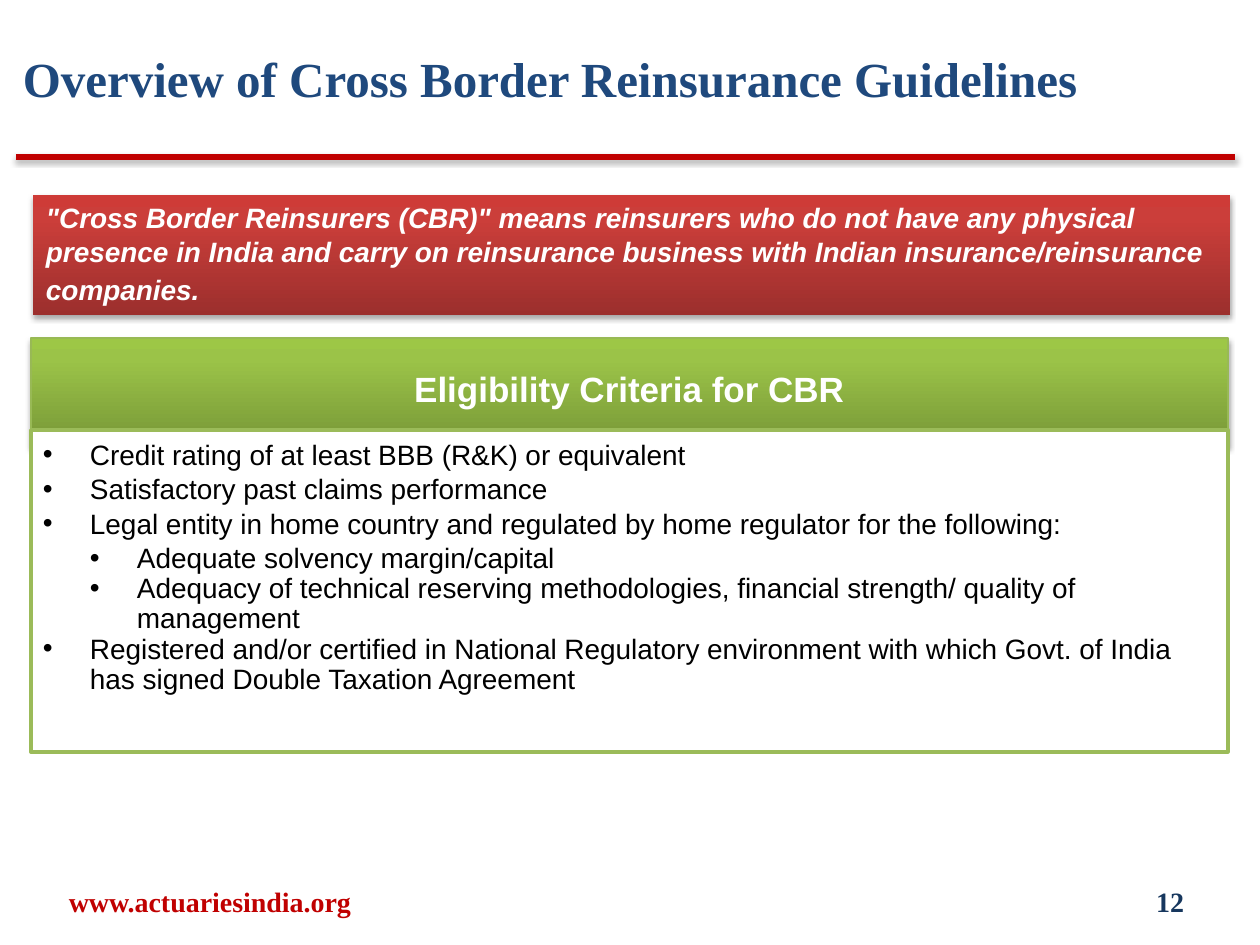
from pptx import Presentation
from pptx.dml.color import RGBColor
from pptx.enum.shapes import MSO_CONNECTOR as CONN, MSO_SHAPE as SHAPE
from pptx.enum.text import MSO_ANCHOR as ANCHOR, PP_ALIGN as ALIGN
from pptx.oxml import parse_xml
from pptx.oxml.ns import nsdecls
from pptx.util import Emu, Pt

SCALE = 914400 / 126
SERIF = "Times New Roman"
RED, WHITE, GREEN = "C00000", "FFFFFF", "9BBB59"
INDENT = 47

# Level and space after for each criterion
CRITERIA = [
    ("Credit rating of at least BBB (R&K) or equivalent", 1, 2.4),
    ("Satisfactory past claims performance", 1, 2.4),
    ("Legal entity in home country and regulated by home regulator "
     "for the following:", 1, 2.4),
    ("Adequate solvency margin/capital", 2, 0),
    ("Adequacy of technical reserving methodologies, financial strength/ "
     "quality of management", 2, 0),
    ("Registered and/or certified in National Regulatory environment with "
     "which Govt. of India has signed Double Taxation Agreement", 1, 0),
]


def px(n):
    return Emu(round(n * SCALE))


def rgb(code):
    return RGBColor.from_string(code)


def shade(props, alpha, dist):
    """Add a soft shadow that falls straight down."""
    props.append(parse_xml(
        f'<a:effectLst {nsdecls("a")}><a:outerShdw blurRad="40000" '
        f'dist="{dist}" dir="5400000" rotWithShape="0"><a:srgbClr val="000000">'
        f'<a:alpha val="{alpha}000"/></a:srgbClr></a:outerShdw></a:effectLst>'))


def blend(shape, low, mid, top):
    """Fill a shape with a gradient that rises from its lower edge."""
    stops = "".join(
        f'<a:gs pos="{at}000"><a:srgbClr val="{code}"/></a:gs>'
        for at, code in ((0, low), (80, mid), (100, top)))
    shape.fill.background()
    props = shape._element.spPr
    old = props.find("{*}noFill")
    props.replace(old, parse_xml(
        f'<a:gradFill {nsdecls("a")} rotWithShape="1"><a:gsLst>{stops}</a:gsLst>'
        '<a:lin ang="16200000" scaled="0"/></a:gradFill>'))


def add_text(para, text, size=16, font="Arial", color="000000",
             bold=False, italic=False, align=ALIGN.LEFT):
    para.alignment = align
    run = para.add_run()
    run.text = text
    face = run.font
    face.size, face.name, face.bold, face.italic = Pt(size), font, bold, italic
    face.color.rgb = rgb(color)


def set_frame(shape, anchor=ANCHOR.TOP, pads=(13, 6, 13, 6)):
    frame = shape.text_frame
    frame.word_wrap = True
    frame.vertical_anchor = anchor
    (frame.margin_left, frame.margin_top,
     frame.margin_right, frame.margin_bottom) = map(px, pads)
    return frame


def add_label(slide, box, text, anchor=ANCHOR.MIDDLE, **style):
    shape = slide.shapes.add_textbox(*map(px, box))
    add_text(set_frame(shape, anchor).paragraphs[0], text, **style)


def add_panel(slide, box, line=None, width=1):
    shape = slide.shapes.add_shape(SHAPE.RECTANGLE, *map(px, box))
    if line:
        shape.line.color.rgb = rgb(line)
        shape.line.width = Pt(width)
    else:
        shape.line.fill.background()
    return shape


def add_rule(slide, left, right, y):
    rule = slide.shapes.add_connector(
        CONN.STRAIGHT, px(left), px(y), px(right), px(y))
    rule.line.color.rgb = rgb(RED)
    rule.line.width = Pt(3)
    shade(rule._element.spPr, 38, 20000)


def add_item(para, text, level, after):
    props = para._p.get_or_add_pPr()
    props.set("marL", str(px(INDENT * level)))
    props.set("indent", str(-px(INDENT)))
    para.level = level
    para.line_spacing = 0.9
    para.space_before, para.space_after = Pt(0), Pt(after)
    for tag in ('buFont typeface="Arial"', 'buChar char="•"'):
        props.append(parse_xml(f'<a:{tag} {nsdecls("a")}/>'))
    add_text(para, text)


def add_definition(slide):
    panel = add_panel(slide, (33, 195, 1197, 120))
    blend(panel, "9C2F2D", "CB3E3A", "CE3B37")
    shade(panel._element.spPr, 35, 23000)
    para = set_frame(panel).paragraphs[0]
    add_text(para, '"Cross Border Reinsurers (CBR)" means reinsurers who do not '
             "have any physical presence in India and carry on reinsurance "
             "business with Indian insurance/reinsurance companies.",
             color=WHITE, bold=True, italic=True)
    add_text(para, " ", size=18.5, font="Calibri", color=WHITE, italic=True)


def add_criteria(slide):
    # Green heading
    head = add_panel(slide, (31, 338, 1197, 107), "98B955", 0.75)
    blend(head, "779737", "9BC348", "9DC746")
    shade(head._element.spPr, 35, 23000)
    frame = set_frame(head, ANCHOR.MIDDLE, (20, 11, 20, 11))
    frame.paragraphs[0].line_spacing = 0.9
    add_text(frame.paragraphs[0], "Eligibility Criteria for CBR", size=20,
             color=WHITE, bold=True, align=ALIGN.CENTER)

    # Bulleted list
    body = add_panel(slide, (31, 430, 1197, 322), GREEN, 2)
    body.shadow.inherit = False
    body.fill.solid()
    body.fill.fore_color.rgb = rgb(WHITE)
    frame = set_frame(body, pads=(12, 11, 15, 18))
    for i, item in enumerate(CRITERIA):
        para = frame.add_paragraph() if i else frame.paragraphs[0]
        add_item(para, *item)


def main():
    deck = Presentation()
    deck.slide_width, deck.slide_height = px(1260), px(945)
    slide = deck.slides.add_slide(deck.slide_layouts[6])

    # Title and footer
    add_rule(slide, 16, 1235, 157)
    add_label(slide, (10, 876, 400, 50), "www.actuariesindia.org", font=SERIF,
              color=RED, bold=True, align=ALIGN.CENTER)
    add_label(slide, (903, 876, 294, 50), "12", font=SERIF, color="17375E",
              bold=True, align=ALIGN.RIGHT)
    add_label(slide, (10, 42, 1250, 84),
              "Overview of Cross Border Reinsurance Guidelines", ANCHOR.TOP,
              size=28, font=SERIF, color="1F497D", bold=True)

    # Content
    add_definition(slide)
    add_criteria(slide)
    deck.save("out.pptx")


if __name__ == "__main__":
    main()
